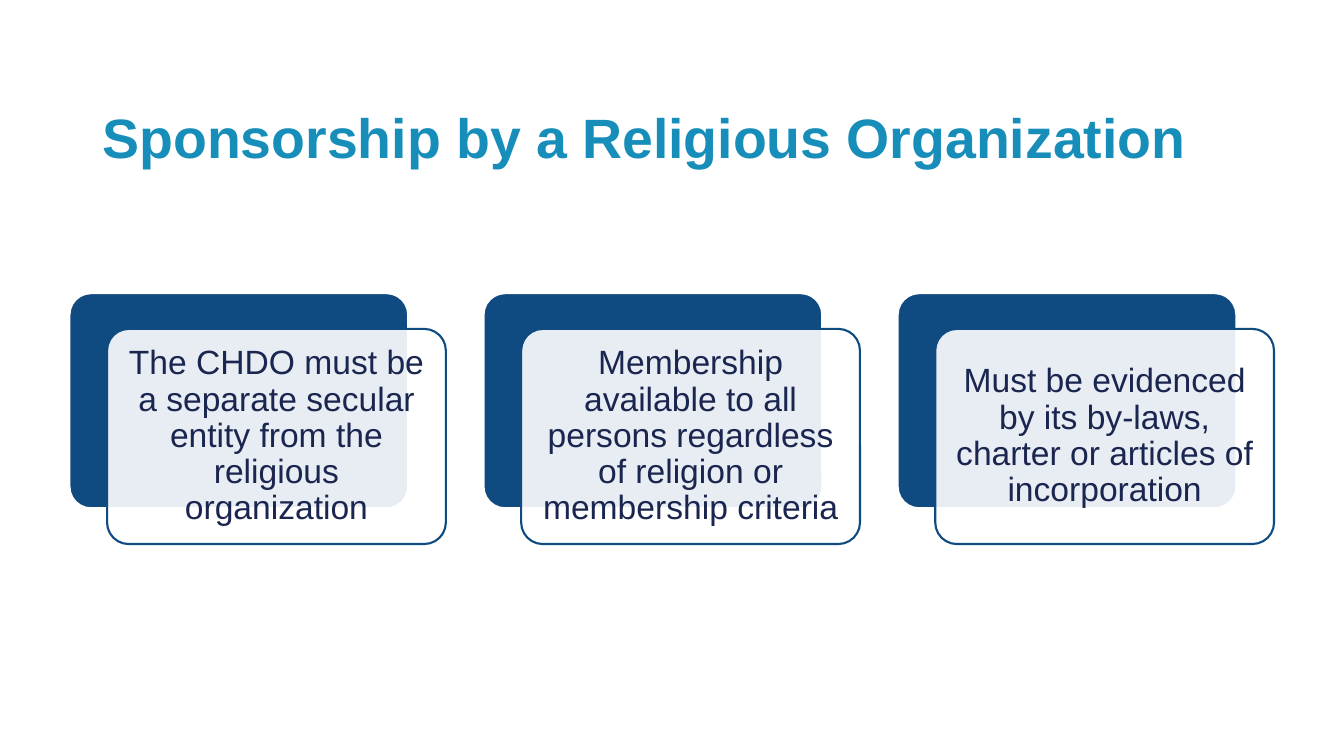
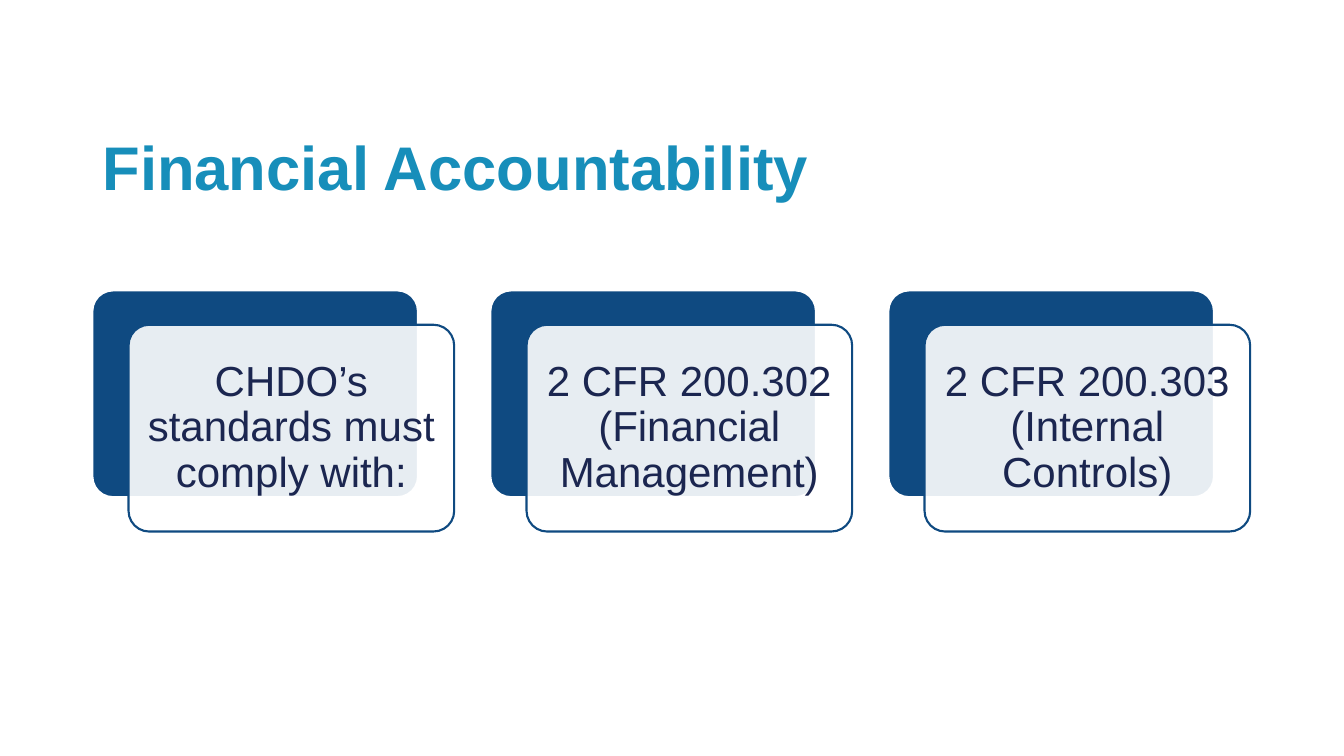
from lxml import etree
from pptx import Presentation
from pptx.dml.color import RGBColor
from pptx.enum.shapes import MSO_SHAPE as SHAPE
from pptx.enum.text import MSO_ANCHOR as ANCHOR, MSO_AUTO_SIZE as AUTO, PP_ALIGN as ALIGN
from pptx.oxml.ns import qn
from pptx.util import Pt

FONT = "Arial"
TITLE, NAVY, INK, WHITE = "178EBA", "0F4A81", "1B2650", "FFFFFF"

SLIDES = [
    {
        "title": "Sponsorship by a Religious Organization",
        "title_box": (66, 66, 828, 68.4), "title_size": 39.6,
        "cards_at": (49.6, 209.4), "card_width": 242, "text_size": 24, "inset": 7.2,
        "cards": [
            "The CHDO must be a separate secular entity from the religious organization",
            "Membership available to all persons regardless of religion or membership criteria",
            "Must be evidenced by its by-laws, charter or articles of incorporation",
        ],
    },
    {
        "title": "Financial Accountability",
        "title_box": (66, 82, 828, 79.2), "title_size": 44,
        "cards_at": (66, 207.4), "card_width": 232.6, "text_size": 30, "inset": 8.6,
        "cards": [
            "CHDO’s standards must comply with:",
            "2 CFR 200.302 (Financial Management)",
            "2 CFR 200.303 (Internal Controls)",
        ],
    },
]


def rgb(color):
    return RGBColor.from_string(color)


def write(shape, text, size, color, align, bold=False):
    tf = shape.text_frame
    tf.text = text
    tf.word_wrap = True
    tf.auto_size = AUTO.NONE
    tf.vertical_anchor = ANCHOR.MIDDLE
    p = tf.paragraphs[0]
    p.alignment = align
    p.line_spacing = 0.9
    font = p.runs[0].font
    font.name, font.size, font.bold = FONT, Pt(size), bold
    font.color.rgb = rgb(color)


def add_panel(s, x, y, w, h, fill, line, opacity=100):
    sp = s.shapes.add_shape(SHAPE.ROUNDED_RECTANGLE, Pt(x), Pt(y), Pt(w), Pt(h))
    sp.adjustments[0] = 0.1
    sp.shadow.inherit = False
    sp.fill.solid()
    sp.fill.fore_color.rgb = rgb(fill)
    sp.line.color.rgb = rgb(line)
    sp.line.width = Pt(1.5)
    if opacity < 100:
        color = sp.fill._xPr.find(qn("a:solidFill"))[0]
        etree.SubElement(color, qn("a:alpha"), val=str(opacity * 1000))
    return sp


def add_title(s, text, box, size):
    title = s.shapes.title
    title.left, title.top, title.width, title.height = map(Pt, box)
    write(title, text, size, TITLE, ALIGN.LEFT, bold=True)


def add_cards(s, data):
    left, top = data["cards_at"]
    w = data["card_width"]
    h = w * 0.635
    dx = w / 9
    dy = dx * 0.95
    pitch = w + 2 * dx
    for i, text in enumerate(data["cards"]):
        x = left + i * pitch
        add_panel(s, x, top, w, h, NAVY, WHITE)
        front = add_panel(s, x + dx, top + dy, w, h, WHITE, NAVY, opacity=90)
        write(front, text, data["text_size"], INK, ALIGN.CENTER)
        tf = front.text_frame
        tf.margin_left = tf.margin_right = Pt(data["inset"])
        tf.margin_top = tf.margin_bottom = Pt(data["inset"])


def main():
    prs = Presentation()
    prs.slide_width, prs.slide_height = Pt(960), Pt(540)
    for data in SLIDES:
        s = prs.slides.add_slide(prs.slide_layouts[5])
        add_title(s, data["title"], data["title_box"], data["title_size"])
        add_cards(s, data)
    prs.save("out.pptx")


if __name__ == "__main__":
    main()
